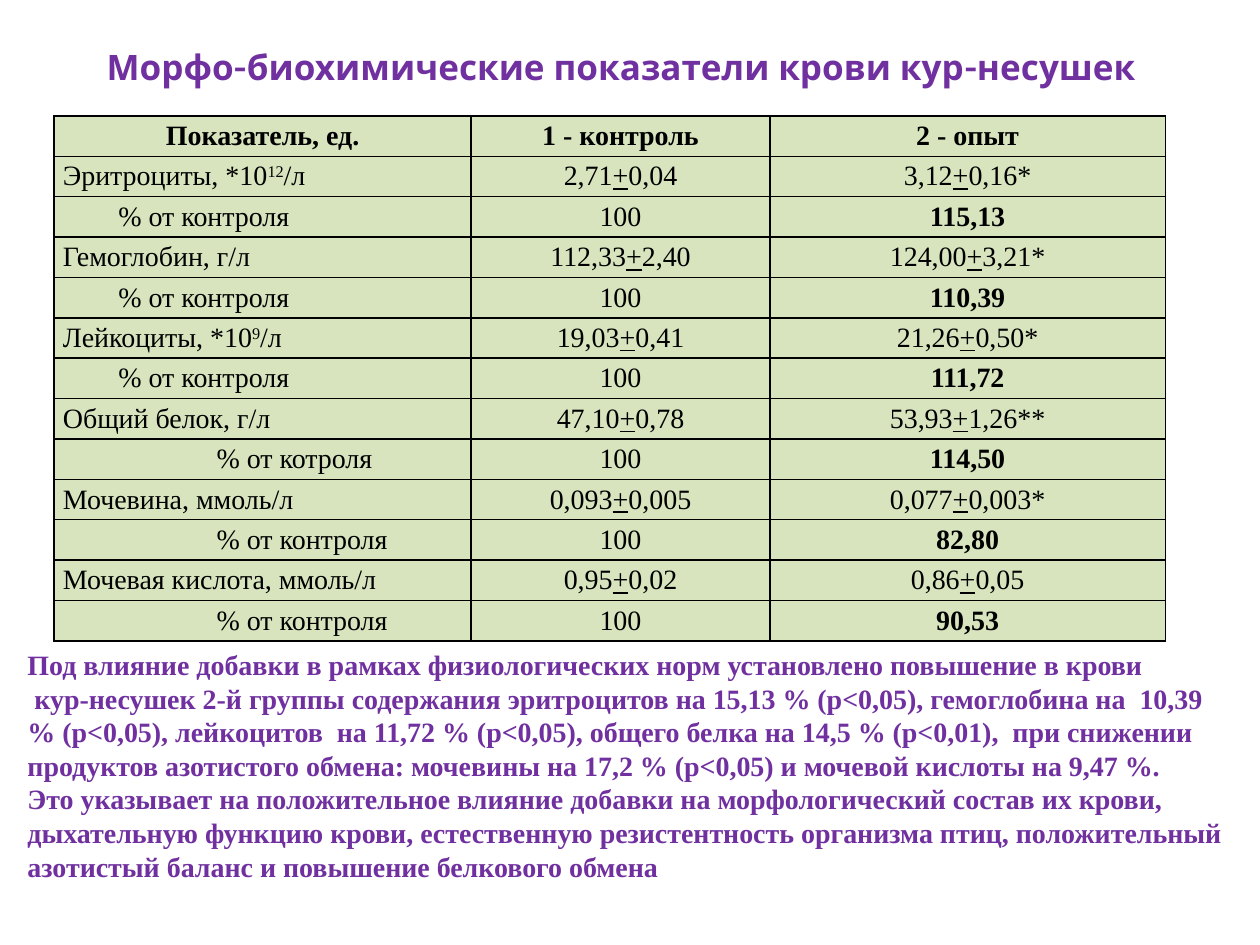
from lxml import etree
from pptx import Presentation
from pptx.dml.color import RGBColor
from pptx.enum.text import MSO_ANCHOR, MSO_AUTO_SIZE, PP_ALIGN
from pptx.oxml.ns import qn
from pptx.util import Inches, Pt

CENTER, JUSTIFY = PP_ALIGN.CENTER, PP_ALIGN.JUSTIFY
MIDDLE = MSO_ANCHOR.MIDDLE
GROW = MSO_AUTO_SIZE.SHAPE_TO_FIT_TEXT

COLORS = {"accent": "7030A0", "ink": "000000", "cell": "D7E4BD"}
SERIF = "Times New Roman"
LEFT = 0.43
COLUMN_WIDTHS = [3.31, 2.37, 3.14]
ROW_HEIGHT = 4.17 / 13
NARROW, WIDE = 0.44, 1.22  # indents of the percentage labels

# label, control, trial, percentage label, its indent, trial percentage
# "|" sets off a superscript in labels
INDICATORS = [
    ("Эритроциты, *10|12|/л", "2,71+0,04", "3,12+0,16*", "% от контроля", NARROW, "115,13"),
    ("Гемоглобин, г/л", "112,33+2,40", "124,00+3,21*", "% от контроля", NARROW, "110,39"),
    ("Лeйкоциты, *10|9|/л", "19,03+0,41", "21,26+0,50*", "% от контроля", NARROW, "111,72"),
    ("Общий белок, г/л", "47,10+0,78", "53,93+1,26**", "% от котроля", WIDE, "114,50"),
    ("Мочевина, ммоль/л", "0,093+0,005", "0,077+0,003*", "% от контроля", WIDE, "82,80"),
    ("Мочевая кислота, ммоль/л", "0,95+0,02", "0,86+0,05", "% от контроля", WIDE, "90,53"),
]
CONCLUSIONS = [
    "Под влияние добавки в рамках физиологических норм установлено повышение в крови",
    " кур-несушек 2-й группы содержания эритроцитов на 15,13 % (р<0,05), гемоглобина на  "
    "10,39 % (р<0,05), лейкоцитов  на 11,72 % (р<0,05), общего белка на 14,5 % (р<0,01),  "
    "при снижении продуктов азотистого обмена: мочевины на 17,2 % (р<0,05) и мочевой "
    "кислоты на 9,47 %.",
    "Это указывает на положительное влияние добавки на морфологический состав их крови, "
    "дыхательную функцию крови, естественную резистентность организма птиц, положительный "
    "азотистый баланс и повышение белкового обмена",
]


def style(font, name, size, color, bold):
    font.name, font.size, font.bold = name, Pt(size), bold
    font.color.rgb = RGBColor.from_string(COLORS[color])


def fill_cell(cell, text, align, bold=False, indent=0):
    cell.margin_left = cell.margin_right = Inches(0.07)
    cell.margin_top = cell.margin_bottom = 0
    paragraph = cell.text_frame.paragraphs[0]
    paragraph.alignment, paragraph.line_spacing = align, 1.15
    if indent:
        paragraph._p.get_or_add_pPr().set("marL", str(Inches(indent)))
    for part in text.replace("+", "|+|").split("|"):
        run = paragraph.add_run()
        run.text = part
        style(run.font, SERIF, 16, "ink", bold)
        if part == "+":
            run.font.underline = True
        elif part.isdigit() and "|" in text:
            run.font._element.set("baseline", "30000")
    # Borders come before the fill in the cell properties
    properties = cell._tc.get_or_add_tcPr()
    for side in ("lnL", "lnR", "lnT", "lnB"):
        border = etree.SubElement(properties, qn(f"a:{side}"), w=str(Pt(1)))
        solid = etree.SubElement(border, qn("a:solidFill"))
        etree.SubElement(solid, qn("a:srgbClr"), val=COLORS["ink"])
    cell.fill.solid()
    cell.fill.fore_color.rgb = RGBColor.from_string(COLORS["cell"])


presentation = Presentation()
presentation.slide_width, presentation.slide_height = Inches(10), Inches(7.5)
slide = presentation.slides.add_slide(presentation.slide_layouts[5])

# Title
title = slide.shapes.title
title.left, title.top = Inches(LEFT), Inches(0.21)
title.width, title.height = Inches(9), Inches(0.63)
title.text_frame.text = "Морфо-биохимические показатели крови кур-несушек"
title.text_frame.vertical_anchor = MIDDLE
heading = title.text_frame.paragraphs[0]
heading.alignment = CENTER
style(heading.runs[0].font, "Karla", 20, "accent", True)

# Blood indicators: a header, then a value row and a percentage row for each
row_count = 1 + 2 * len(INDICATORS)
blood = slide.shapes.add_table(
    row_count, len(COLUMN_WIDTHS), Inches(LEFT), Inches(0.92),
    Inches(sum(COLUMN_WIDTHS)), Inches(ROW_HEIGHT * row_count)).table
for column, width in zip(blood.columns, COLUMN_WIDTHS):
    column.width = Inches(width)
for row in blood.rows:
    row.height = Inches(ROW_HEIGHT)

for column, header in enumerate(["Показатель, ед.", "1 - контроль", "2 - опыт"]):
    fill_cell(blood.cell(0, column), header, CENTER, bold=True)
for i, (label, control, trial, share_label, indent, share) in enumerate(INDICATORS):
    value_row = 1 + 2 * i
    share_row = value_row + 1
    fill_cell(blood.cell(value_row, 0), label, JUSTIFY)
    fill_cell(blood.cell(value_row, 1), control, CENTER)
    fill_cell(blood.cell(value_row, 2), trial, CENTER)
    fill_cell(blood.cell(share_row, 0), share_label, JUSTIFY, indent=indent)
    fill_cell(blood.cell(share_row, 1), "100", CENTER)
    fill_cell(blood.cell(share_row, 2), share, CENTER, bold=True)

# Conclusions
conclusion = slide.shapes.add_textbox(
    Inches(0.12), Inches(5.09), Inches(9.76), Inches(2.29)).text_frame
conclusion.word_wrap = True
conclusion.auto_size = GROW
conclusion.text = "\n".join(CONCLUSIONS)
for paragraph in conclusion.paragraphs:
    style(paragraph.runs[0].font, SERIF, 16, "accent", True)

presentation.save("out.pptx")
